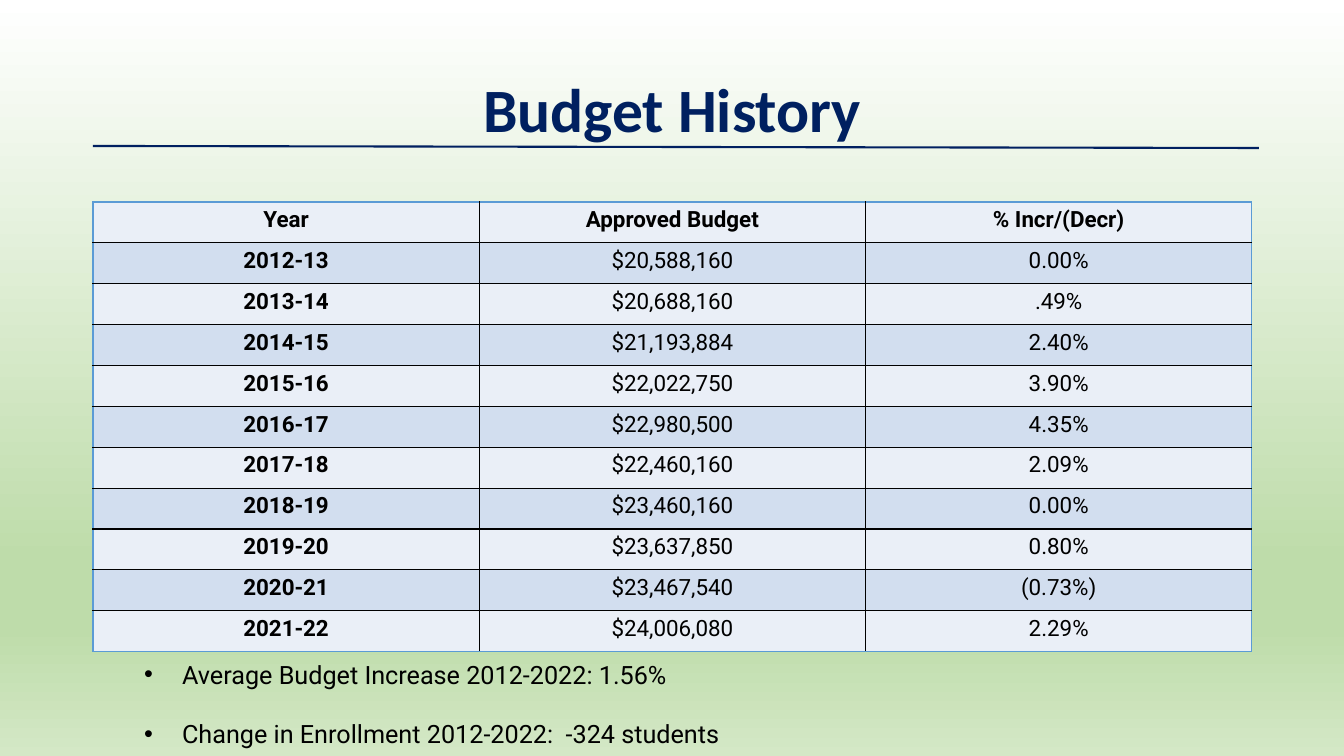
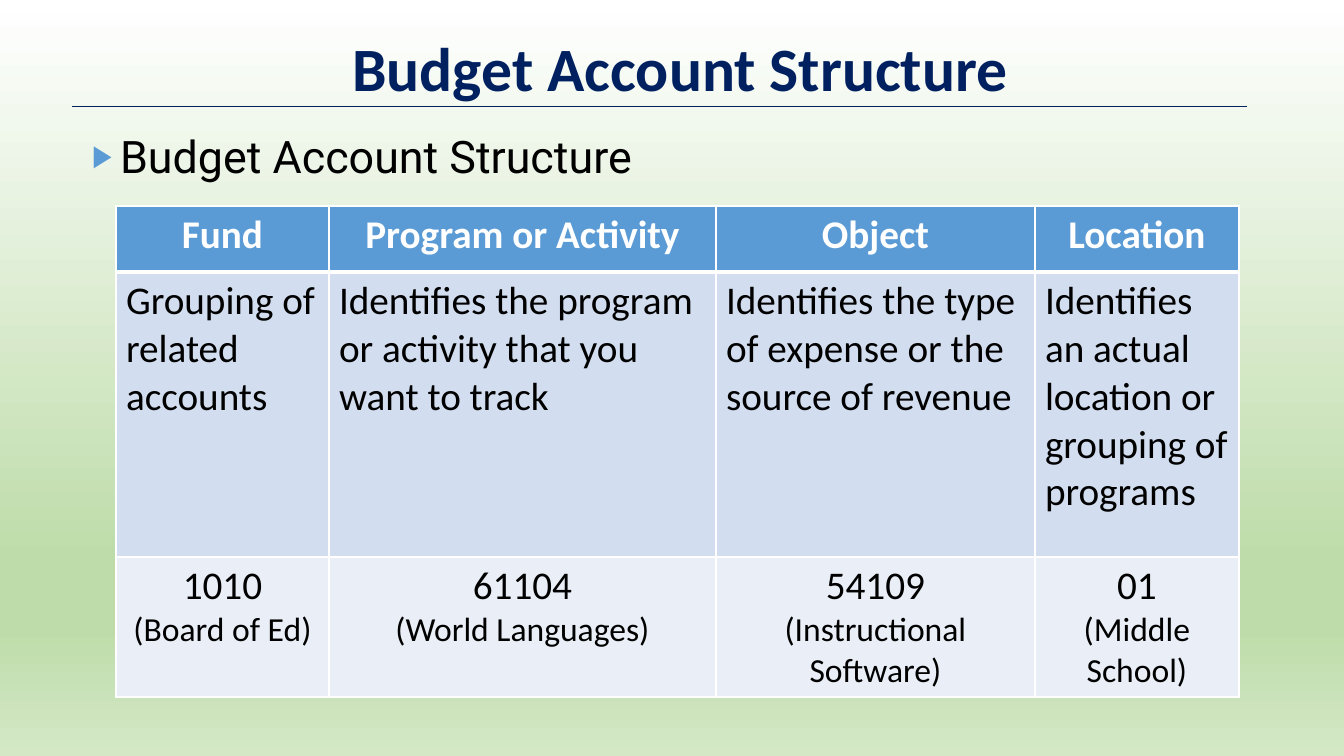
import pptx
import pptx.dml.color
import pptx.enum.shapes
import pptx.enum.text
import pptx.oxml
import pptx.oxml.ns
import pptx.util

RGBColor = pptx.dml.color.RGBColor
Pt = pptx.util.Pt
PP_ALIGN = pptx.enum.text.PP_ALIGN
MSO_ANCHOR = pptx.enum.text.MSO_ANCHOR

NAVY = RGBColor(0x00, 0x20, 0x60)
BLUE = RGBColor(0x5B, 0x9B, 0xD5)
PALE_BLUE = RGBColor(0xD2, 0xDE, 0xEF)
PALEST_BLUE = RGBColor(0xEA, 0xEF, 0xF7)
BLACK = RGBColor(0x00, 0x00, 0x00)
WHITE = RGBColor(0xFF, 0xFF, 0xFF)
GREEN = RGBColor(0xBE, 0xDC, 0xAA)
LIGHT_GREEN = RGBColor(0xD4, 0xE8, 0xC6)
BACKGROUND_STOPS = [(0, WHITE), (74, GREEN), (83, GREEN), (100, LIGHT_GREEN)]

HEADING_FONT = "Calibri"
BODY_FONT = "Roboto"
EMU_PER_PX = 914400 / 100.8


def px(length):
    return pptx.util.Emu(round(length * EMU_PER_PX))


def xml(text):
    namespace = pptx.oxml.ns.nsdecls("a")
    return pptx.oxml.parse_xml(text.replace("/>", f" {namespace}/>", 1)
                               if text.count("<") == 1
                               else text.replace(">", f" {namespace}>", 1))


def style_paragraph(paragraph, font, size, color, bold=False, align=None):
    paragraph.alignment = align
    for run in paragraph.runs:
        run.font.name = font
        run.font.size = Pt(size)
        run.font.bold = bold
        run.font.color.rgb = color


class Deck:
    def __init__(self):
        self.presentation = pptx.Presentation()
        self.presentation.slide_width = px(1344)
        self.presentation.slide_height = px(756)
        self.slide = None
        self.paint_background()

    def paint_background(self):
        master = self.presentation.slide_master
        fill = master.background.fill
        fill.gradient()
        fill.gradient_angle = 270
        stop_list = master.element.xpath("./p:cSld/p:bg//a:gsLst")[0]
        for stop in list(stop_list):
            stop_list.remove(stop)
        for percent, color in BACKGROUND_STOPS:
            stop_list.append(xml(f'<a:gs pos="{percent * 1000}"><a:srgbClr val="{color}"/></a:gs>'))

    def add_slide(self, title, box):
        layout = self.presentation.slide_layouts.get_by_name("Title and Content")
        self.slide = self.presentation.slides.add_slide(layout)
        frame = self.place(self.slide.shapes.title, box, title)
        frame.vertical_anchor = MSO_ANCHOR.MIDDLE
        frame.paragraphs[0].line_spacing = 0.9
        style_paragraph(frame.paragraphs[0], HEADING_FONT, 44, NAVY, True, PP_ALIGN.CENTER)

    def place(self, shape, box, text):
        """Move a placeholder, fill it with text and return its text frame."""
        shape.left, shape.top, shape.width, shape.height = map(px, box)
        frame = shape.text_frame
        frame.text = text
        frame.word_wrap = True
        frame.auto_size = pptx.enum.text.MSO_AUTO_SIZE.NONE
        return frame

    def bullets(self, items, box, size, margin, hanging, symbol="•",
                symbol_color=BLACK, symbol_percent=100, gap=0):
        frame = self.place(self.slide.placeholders[1], box, "\n".join(items))
        frame.vertical_anchor = MSO_ANCHOR.TOP
        for index, paragraph in enumerate(frame.paragraphs):
            properties = paragraph._p.get_or_add_pPr()
            properties.set("marL", str(px(margin)))
            properties.set("indent", str(-px(hanging)))
            properties.append(xml(f'<a:buClr><a:srgbClr val="{symbol_color}"/></a:buClr>'))
            properties.append(xml(f'<a:buSzPct val="{symbol_percent * 1000}"/>'))
            properties.append(xml('<a:buFont typeface="Arial"/>'))
            properties.append(xml(f'<a:buChar char="{symbol}"/>'))
            paragraph.line_spacing = 1.0
            paragraph.space_before = Pt(gap if index else 0)
            style_paragraph(paragraph, BODY_FONT, size, BLACK)

    def rule(self, start, end, width):
        line = self.slide.shapes.add_connector(
            pptx.enum.shapes.MSO_CONNECTOR.STRAIGHT, *map(px, start + end))
        line.line.color.rgb = NAVY
        line.line.width = Pt(width)
        line._element.spPr.append(xml("<a:effectLst/>"))

    def table(self, rows, box):
        """Add an unstyled table with equal rows and columns."""
        table = self.slide.shapes.add_table(len(rows), len(rows[0]), *map(px, box)).table
        table.first_row = table.horz_banding = False
        for row, texts in zip(table.rows, rows):
            for cell, text in zip(row.cells, texts):
                cell.text = text
        return table

    def cell_style(self, cell, fill, borders):
        """Fill a cell; borders are (colour, points) for left, right, top, bottom."""
        cell.fill.solid()
        cell.fill.fore_color.rgb = fill
        properties = cell._tc.get_or_add_tcPr()
        for index, (side, (color, width)) in enumerate(zip("LRTB", borders)):
            properties.insert(index, xml(
                f'<a:ln{side} w="{Pt(width)}"><a:solidFill><a:srgbClr val="{color}"/>'
                f'</a:solidFill></a:ln{side}>'))


def budget_history(deck):
    deck.add_slide("Budget History", (93, 40, 1159, 146))
    rows = [
        ("Year", "Approved Budget", "% Incr/(Decr)"),
        ("2012-13", "$20,588,160", "0.00%"),
        ("2013-14", "$20,688,160", ".49%"),
        ("2014-15", "$21,193,884", "2.40%"),
        ("2015-16", "$22,022,750", "3.90%"),
        ("2016-17", "$22,980,500", "4.35%"),
        ("2017-18", "$22,460,160", "2.09%"),
        ("2018-19", "$23,460,160", "0.00%"),
        ("2019-20", "$23,637,850", "0.80%"),
        ("2020-21", "$23,467,540", "(0.73%)"),
        ("2021-22", "$24,006,080", "2.29%"),
    ]
    table = deck.table(rows, (93, 202, 1159, 450))
    last_row, last_column = len(rows) - 1, len(rows[0]) - 1
    for r, row in enumerate(table.rows):
        for c, cell in enumerate(row.cells):
            outer_edges = (c == 0, c == last_column, r == 0, r == last_row)
            borders = [(BLUE if outer else BLACK, 1) for outer in outer_edges]
            deck.cell_style(cell, PALE_BLUE if r % 2 else PALEST_BLUE, borders)
            style_paragraph(cell.text_frame.paragraphs[0], BODY_FONT, 16, BLACK,
                            r == 0 or c == 0, PP_ALIGN.CENTER)
    deck.rule((93, 146), (1259, 148), 1.5)
    deck.bullets(["Average Budget Increase 2012-2022: 1.56%",
                  "Change in Enrollment 2012-2022:  -324 students"],
                 (134, 654, 1118, 102), 18, margin=38, hanging=38, gap=21)


def account_structure(deck):
    deck.add_slide("Budget Account Structure", (227, 17, 907, 109))
    deck.bullets(["Budget Account Structure"], (70, 124, 1169, 544), 32, margin=40,
                 hanging=28, symbol="▶", symbol_color=BLUE, symbol_percent=68)
    deck.rule((72, 106), (1247, 106), 0.5)
    rows = [
        ("Fund", "Program or Activity", "Object", "Location"),
        ("Grouping of related accounts",
         "Identifies the program or activity that you want to track",
         "Identifies the type of expense or the source of revenue",
         "Identifies an actual location or grouping of programs"),
        ("1010\n(Board of Ed)", "61104\n(World Languages)",
         "54109\n(Instructional Software)", "01\n(Middle School)"),
    ]
    table = deck.table(rows, (116, 206, 1123, 489))
    for column, width in zip(table.columns, (213, 387, 319, 204)):
        column.width = px(width)
    for row, height in zip(table.rows, (66, 285, 138)):
        row.height = px(height)
    fills = (BLUE, PALE_BLUE, PALEST_BLUE)
    for r, row in enumerate(table.rows):
        top, bottom = (3 if r == 1 else 1), (3 if r == 0 else 1)
        borders = [(WHITE, width) for width in (1, 1, top, bottom)]
        for cell in row.cells:
            deck.cell_style(cell, fills[r], borders)
            for index, paragraph in enumerate(cell.text_frame.paragraphs):
                style_paragraph(paragraph, HEADING_FONT, 24 if index else 28,
                                BLACK if r else WHITE, r == 0,
                                PP_ALIGN.LEFT if r == 1 else PP_ALIGN.CENTER)


def main():
    deck = Deck()
    budget_history(deck)
    account_structure(deck)
    deck.presentation.save("out.pptx")


if __name__ == "__main__":
    main()
